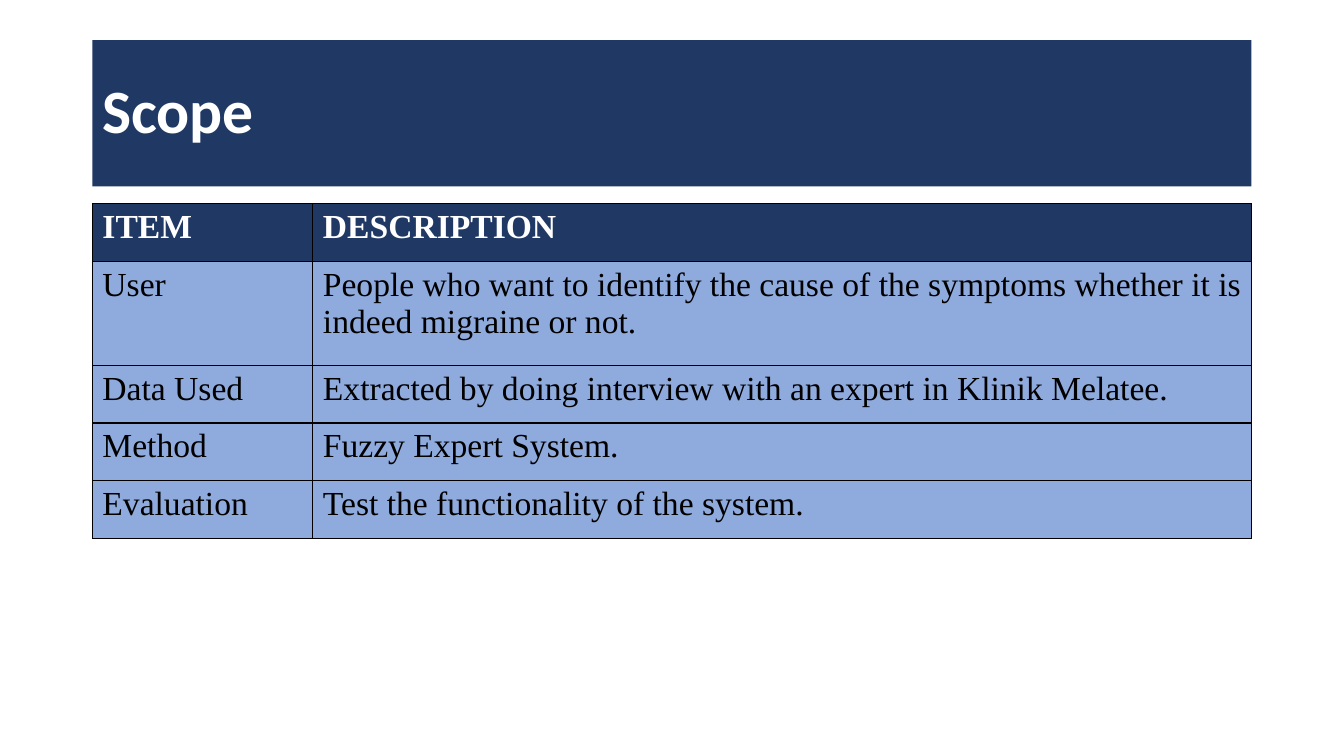
"""Build the Scope slide with a title banner and a table of items."""
import pptx
import pptx.dml.color
import pptx.enum.shapes
import pptx.enum.text
import pptx.oxml
import pptx.oxml.ns
import pptx.util

Pt = pptx.util.Pt


def color(value):
    return pptx.dml.color.RGBColor.from_string(value)


class ScopeSlide:
    navy, blue, white, black = "203864", "8FAADC", "FFFFFF", "000000"
    heading_font, table_font = "Calibri", "Times New Roman"

    def __init__(self, deck):
        self.page = deck.slides.add_slide(deck.slide_layouts[6])

    def fill(self, target, value):
        target.fill.solid()
        target.fill.fore_color.rgb = color(value)

    def style(self, paragraph, name, size, value, bold):
        font = paragraph.font
        font.name, font.size, font.bold = name, Pt(size), bold
        font.color.rgb = color(value)

    def banner(self, text, left, top, width, height):
        box = self.page.shapes.add_shape(
            pptx.enum.shapes.MSO_SHAPE.RECTANGLE,
            Pt(left), Pt(top), Pt(width), Pt(height))
        box.shadow.inherit = False
        self.fill(box, self.navy)
        box.line.fill.background()
        frame = box.text_frame
        frame.word_wrap = True
        frame.vertical_anchor = pptx.enum.text.MSO_ANCHOR.MIDDLE
        para = frame.paragraphs[0]
        para.text = text
        para.alignment = pptx.enum.text.PP_ALIGN.LEFT
        para.line_spacing = 0.9
        self.style(para, self.heading_font, 44, self.white, True)

    def borders(self, cell):
        properties = cell._tc.get_or_add_tcPr()
        for position, side in enumerate(("lnL", "lnR", "lnT", "lnB")):
            border = pptx.oxml.parse_xml(
                f'<a:{side} {pptx.oxml.ns.nsdecls("a")} w="{Pt(1)}">'
                f'<a:solidFill><a:srgbClr val="{self.black}"/></a:solidFill>'
                f'</a:{side}>')
            properties.insert(position, border)

    def table(self, rows, left, top, widths, heights):
        table = self.page.shapes.add_table(
            len(rows), len(widths), Pt(left), Pt(top),
            Pt(sum(widths)), Pt(sum(heights))).table
        for column, width in zip(table.columns, widths):
            column.width = Pt(width)
        for index, (row, texts, height) in enumerate(zip(table.rows, rows, heights)):
            row.height = Pt(height)
            header = index == 0
            for cell, text in zip(row.cells, texts):
                cell.text = text
                self.fill(cell, self.navy if header else self.blue)
                self.borders(cell)
                self.style(cell.text_frame.paragraphs[0], self.table_font, 24,
                           self.white if header else self.black, header)


def main():
    deck = pptx.Presentation()
    deck.slide_width, deck.slide_height = Pt(960), Pt(540)
    slide = ScopeSlide(deck)
    slide.banner("Scope", 66, 28.75, 828, 104.4)
    rows = [
        ("ITEM", "DESCRIPTION"),
        ("User", "People who want to identify the cause of the symptoms "
                 "whether it is indeed migraine or not."),
        ("Data Used", "Extracted by doing interview with an expert in Klinik Melatee."),
        ("Method", "Fuzzy Expert System."),
        ("Evaluation", "Test the functionality of the system."),
    ]
    slide.table(rows, 66, 145.6, (157.5, 670.5), (41.2, 74.2, 41.2, 41.2, 41.2))
    deck.save("out.pptx")


if __name__ == "__main__":
    main()
